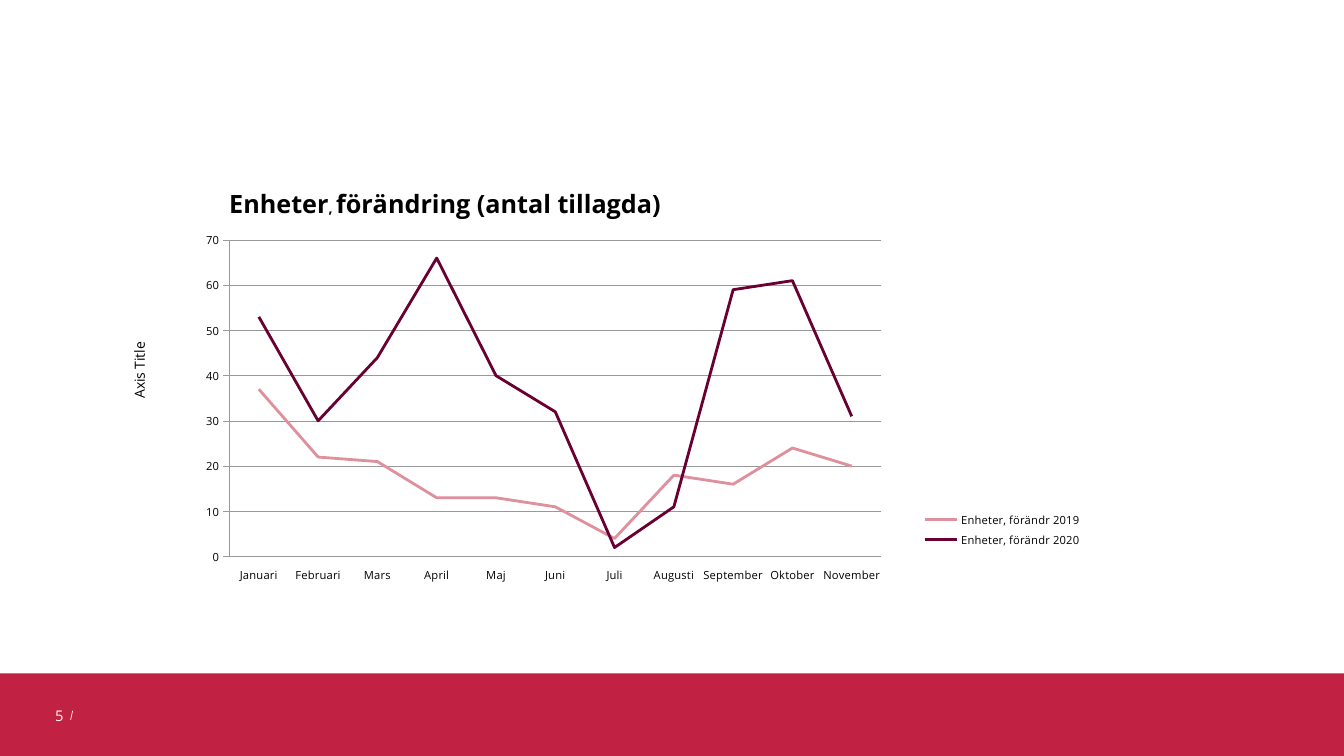
from lxml.etree import SubElement
from pptx import Presentation
from pptx.chart.data import CategoryChartData
from pptx.dml.color import RGBColor
from pptx.enum.chart import XL_CHART_TYPE, XL_LEGEND_POSITION, XL_TICK_LABEL_POSITION, XL_TICK_MARK
from pptx.enum.shapes import MSO_CONNECTOR, MSO_SHAPE
from pptx.enum.text import MSO_ANCHOR, PP_ALIGN
from pptx.oxml import parse_xml
from pptx.oxml.ns import nsdecls, qn
from pptx.util import Cm, Pt

FONT = "Open Sans"
MONTHS = ["Januari", "Februari", "Mars", "April", "Maj", "Juni", "Juli",
          "Augusti", "September", "Oktober", "November"]
SERIES = [
    ("Enheter, förändr 2019", "DE909D", [37, 22, 21, 13, 13, 11, 4, 18, 16, 24, 20]),
    ("Enheter, förändr 2020", "6A0032", [53, 30, 44, 66, 40, 32, 2, 11, 59, 61, 31]),
]


def color(value):
    """Turn a hex string into a colour."""
    return RGBColor.from_string(value)


def style_font(font, size, value="000000", bold=False):
    """Set typeface, size, colour and weight."""
    font.name = FONT
    font.size = Pt(size)
    font.bold = bold
    font.color.rgb = color(value)


def style_line(line, value, width):
    """Set colour and width of a line."""
    line.color.rgb = color(value)
    line.width = Pt(width)


def set_layout(element, index, x, y, width=None, height=None, inner=False):
    """Place a chart part by fractions of the chart's size."""
    for old_layout in element.findall(qn("c:layout")):
        element.remove(old_layout)
    layout = parse_xml(f"<c:layout {nsdecls('c')}><c:manualLayout/></c:layout>")
    settings = [("layoutTarget", "inner")] if inner else []
    settings += [("xMode", "edge"), ("yMode", "edge"), ("x", x), ("y", y)]
    if width is not None:
        settings += [("w", width), ("h", height)]
    for name, value in settings:
        SubElement(layout[0], qn(f"c:{name}")).set("val", str(value))
    element.insert(index, layout)


def add_title(chart):
    """Write the chart title over the plot."""
    title = chart.chart_title
    paragraph = title.text_frame.paragraphs[0]
    for text, size in [("Enheter", 18), (", ", 10), ("förändring (antal tillagda)", 18)]:
        run = paragraph.add_run()
        run.text = text
        style_font(run.font, size, bold=True)
    element = title._element
    set_layout(element, 1, 0.12, 0.04)
    element.find(qn("c:overlay")).set("val", "1")


def style_axes(chart):
    """Format both axes, the gridlines and the axis title."""
    months, units = chart.category_axis, chart.value_axis
    for axis, width in [(months, 1), (units, 0.25)]:
        style_font(axis.tick_labels.font, 8)
        style_line(axis.format.line, "999999", width)
    months.major_tick_mark = XL_TICK_MARK.NONE
    months.tick_label_position = XL_TICK_LABEL_POSITION.LOW
    units.major_tick_mark = XL_TICK_MARK.OUTSIDE
    units.minimum_scale, units.maximum_scale, units.major_unit = 0, 70, 10
    units.has_major_gridlines = True
    style_line(units.major_gridlines.format.line, "999999", 0.25)

    text_frame = units.axis_title.text_frame
    text_frame.text = "Axis Title"
    style_font(text_frame.paragraphs[0].runs[0].font, 10)
    body = text_frame._txBody.bodyPr
    body.set("rot", "-5400000")
    body.set("vert", "horz")
    set_layout(units.axis_title._element, 1, 0.02, 0.39)


def add_units_chart(slide, left, top, width, height):
    """Draw the line chart of added units per month."""
    data = CategoryChartData()
    data.categories = MONTHS
    for name, _, values in SERIES:
        data.add_series(name, values)
    chart = slide.shapes.add_chart(XL_CHART_TYPE.LINE, Cm(left), Cm(top),
                                   Cm(width), Cm(height), data).chart
    style_font(chart.font, 10)
    add_title(chart)
    style_axes(chart)

    plot = chart.plots[0]
    plot.vary_by_categories = False
    for series, (_, value, _) in zip(plot.series, SERIES):
        series.smooth = False
        style_line(series.format.line, value, 2)
    set_layout(chart._chartSpace.chart.plotArea, 0, 0.123, 0.17, 0.651, 0.7, inner=True)

    chart.has_legend = True
    legend = chart.legend
    legend.position = XL_LEGEND_POSITION.RIGHT
    legend.include_in_layout = False
    style_font(legend.font, 8)
    set_layout(legend._element, 1, 0.81, 0.76, 0.17, 0.1)


def add_footer(slide, left, top, width, height):
    """Draw the footer band with page number and slanted stroke."""
    band = slide.shapes.add_shape(MSO_SHAPE.RECTANGLE, Cm(left), Cm(top), Cm(width), Cm(height))
    band.shadow.inherit = False
    band.fill.solid()
    band.fill.fore_color.rgb = color("C12143")
    band.line.fill.background()

    stroke = slide.shapes.add_connector(MSO_CONNECTOR.STRAIGHT, Cm(left + 1.83), Cm(top + 0.94),
                                        Cm(left + 1.78), Cm(top + 1.17))
    style_line(stroke.line, "FFFFFF", 0.5)
    SubElement(stroke._element.spPr, qn("a:effectLst"))

    number = slide.shapes.add_textbox(Cm(left + 0.76), Cm(top + 0.56), Cm(1.09), Cm(1.02))
    text_frame = number.text_frame
    text_frame.word_wrap = True
    text_frame.vertical_anchor = MSO_ANCHOR.MIDDLE
    text_frame.text = "5"
    paragraph = text_frame.paragraphs[0]
    paragraph.alignment = PP_ALIGN.RIGHT
    style_font(paragraph.runs[0].font, 10.5, "FFFFFF")


def main():
    """Build the slide and save it."""
    presentation = Presentation()
    presentation.slide_width, presentation.slide_height = Cm(33.87), Cm(19.05)
    slide = presentation.slides.add_slide(presentation.slide_layouts[6])
    add_footer(slide, 0, 16.97, 33.87, 2.08)
    add_units_chart(slide, 2.67, 4.11, 25.25, 11.4)
    presentation.save("out.pptx")


if __name__ == "__main__":
    main()
